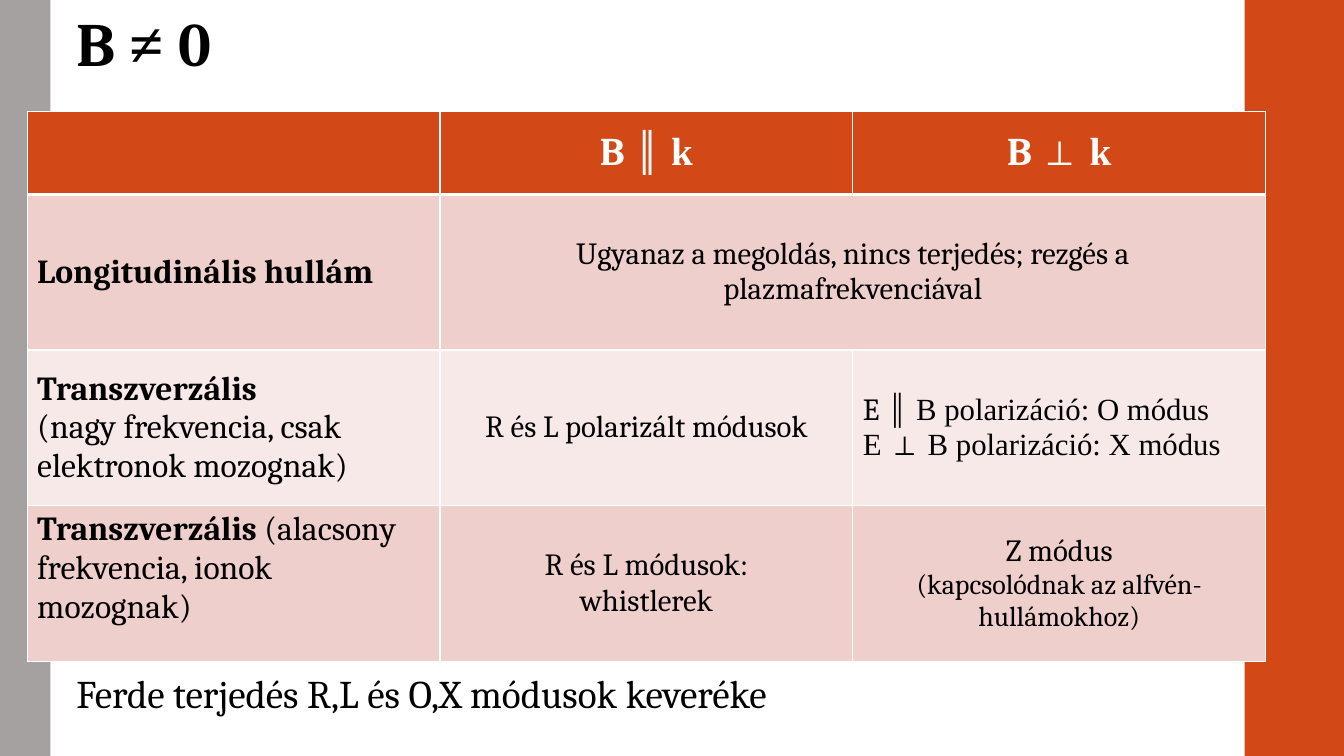
"""Build the slide on wave modes in a magnetised plasma."""
from lxml.etree import SubElement
from pptx import Presentation
from pptx.dml.color import RGBColor as RGB
from pptx.enum.shapes import MSO_SHAPE as SHAPE
from pptx.enum.text import MSO_ANCHOR as ANCHOR, PP_ALIGN as ALIGN
from pptx.oxml.ns import qn
from pptx.util import Pt

COLORS = {"accent": "D34817", "grey": "A6A1A1", "white": "FFFFFF",
          "black": "000000", "dark": "EFCFCC", "light": "F7E9E8"}
SERIF, TIMES = "Cambria", "Times New Roman"
W, H = 960, 540

HEAD = {"size": 28, "bold": True, "color": "white"}
HEAD_T = {**HEAD, "name": TIMES}
LABEL, NOTE = {"size": 24, "bold": True}, {"size": 24}
BODY, SMALL = {"size": 22}, {"size": 20}
BODY_T = {**BODY, "name": TIMES}

TITLE_FMT = {"size": 44, "bold": True}
TITLE = [[("B ", TITLE_FMT), ("≠ ", {**TITLE_FMT, "name": TIMES}), ("0", TITLE_FMT)]]
FOOTER = [[("Ferde terjedés R,L és O,X módusok keveréke", {"size": 28})]]
ROWS = [
    [[],
     [[("B ", HEAD), ("∥ k", HEAD_T)]],
     [[("B ", HEAD), ("⊥ k", HEAD_T)]]],
    [[[("Longitudinális hullám", LABEL)]],
     [[("Ugyanaz a megoldás, nincs terjedés; rezgés a plazmafrekvenciával", BODY)]],
     []],
    [[[("Transzverzális", LABEL)],
      [("(nagy frekvencia, csak elektronok mozognak)", NOTE)]],
     [[("R és L polarizált módusok", BODY)]],
     [[("E ", BODY), ("∥ B polarizáció: O módus", BODY_T)],
      [("E ⊥ B polarizáció: X módus", BODY_T)]]],
    [[[("Transzverzális", LABEL), (" (alacsony frekvencia, ionok mozognak)", NOTE)]],
     [[("R és L módusok:", BODY)], [("whistlerek", BODY)]],
     [[("Z módus", BODY)], [("(kapcsolódnak az alfvén-hullámokhoz)", SMALL)]]],
]
ROW_FILLS = ["accent", "dark", "light", "dark"]
ROW_HEIGHTS = [59.3, 111.2, 111.2, 111.2]
COL_WIDTH = 294.9
TABLE_AT = (19.4, 79.6)
LEFT_ALIGNED = {(2, 2)}
TOP_ANCHORED = {(3, 0)}
BANDS = [(889, 72, "accent"), (0, 36, "grey")]
TEXT_LEFT, TEXT_WIDTH = 47.5, 785


def rgb(name):
    return RGB.from_string(COLORS[name])


def write(tf, paragraphs, align=ALIGN.LEFT, spacing=None):
    for i, runs in enumerate(paragraphs):
        p = tf.add_paragraph() if i else tf.paragraphs[0]
        p.alignment = align
        if spacing:
            p.line_spacing = spacing
        for text, fmt in runs:
            r = p.add_run()
            r.text = text
            fmt = {"name": SERIF, "bold": False, "color": "black", **fmt}
            r.font.color.rgb = rgb(fmt.pop("color"))
            for key, value in fmt.items():
                setattr(r.font, key, Pt(value) if key == "size" else value)


def set_borders(cell, widths):
    for side, width in widths.items():
        ln = SubElement(cell._tc.get_or_add_tcPr(), qn(f"a:{side}"), w=str(Pt(width)))
        fill = SubElement(ln, qn("a:solidFill"))
        SubElement(fill, qn("a:srgbClr"), val=COLORS["white"])


def add_modes_table(shapes):
    n_rows, n_cols = len(ROWS), len(ROWS[0])
    frame = shapes.add_table(n_rows, n_cols, *map(Pt, TABLE_AT),
                             Pt(COL_WIDTH * n_cols), Pt(sum(ROW_HEIGHTS)))
    table = frame.table
    for col in table.columns:
        col.width = Pt(COL_WIDTH)
    for i, cells in enumerate(ROWS):
        table.rows[i].height = Pt(ROW_HEIGHTS[i])
        for j, paragraphs in enumerate(cells):
            cell = table.cell(i, j)
            set_borders(cell, {"lnL": 1, "lnR": 1, "lnT": 3 if i == 1 else 1,
                               "lnB": 3 if i == 0 else 1})
            cell.fill.solid()
            cell.fill.fore_color.rgb = rgb(ROW_FILLS[i])
            cell.vertical_anchor = ANCHOR.TOP if (i, j) in TOP_ANCHORED else ANCHOR.MIDDLE
            left = j == 0 or (i, j) in LEFT_ALIGNED
            write(cell.text_frame, paragraphs, ALIGN.LEFT if left else ALIGN.CENTER)
    table.cell(1, 1).merge(table.cell(1, 2))


def place_text(sp, top, height, paragraphs):
    box = {"left": TEXT_LEFT, "top": top, "width": TEXT_WIDTH, "height": height}
    for key, value in box.items():
        setattr(sp, key, Pt(value))
    sp.text_frame.word_wrap = True
    sp.text_frame.vertical_anchor = ANCHOR.TOP
    write(sp.text_frame, paragraphs, spacing=0.85)


def main():
    prs = Presentation()
    prs.slide_width, prs.slide_height = Pt(W), Pt(H)
    s = prs.slides.add_slide(prs.slide_layouts[5])
    for left, width, color in BANDS:
        sp = s.shapes.add_shape(SHAPE.RECTANGLE, Pt(left), 0, Pt(width), Pt(H))
        sp.shadow.inherit = False
        sp.fill.solid()
        sp.fill.fore_color.rgb = rgb(color)
        sp.line.fill.background()
    place_text(s.shapes.title, 8, 60, TITLE)
    add_modes_table(s.shapes)
    place_text(s.shapes.add_textbox(0, 0, 0, 0), 480, 40, FOOTER)
    prs.save("out.pptx")


if __name__ == "__main__":
    main()
